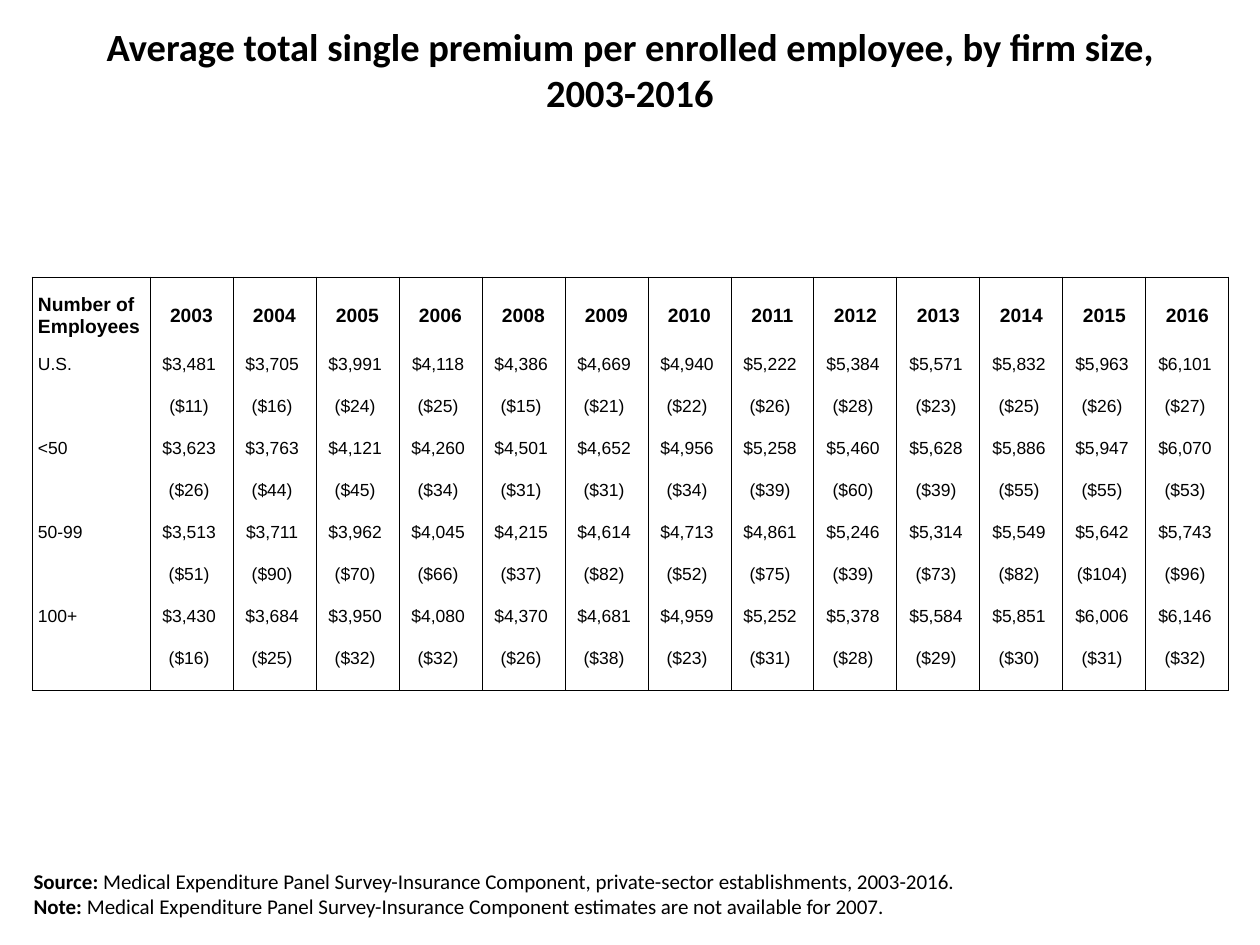
"""Build a slide with a table of single premiums by firm size."""
from lxml import etree
from pptx import Presentation
from pptx.dml.color import RGBColor
from pptx.enum.text import MSO_ANCHOR, PP_ALIGN
from pptx.oxml.ns import qn
from pptx.util import Pt

LEFT, CENTER = PP_ALIGN.LEFT, PP_ALIGN.CENTER
TOP, MIDDLE = MSO_ANCHOR.TOP, MSO_ANCHOR.MIDDLE
BLACK = RGBColor(0, 0, 0)
SCALE = 914400 / 126

TITLE = "Average total single premium per enrolled employee, by firm size, 2003-2016"
NOTES = [
    ("Source: ", "Medical Expenditure Panel Survey-Insurance Component, private-sector establishments, 2003-2016."),
    ("Note: ", "Medical Expenditure Panel Survey-Insurance Component estimates are not available for 2007."),
]
HEAD = "Number of Employees"
YEARS = [2003, 2004, 2005, 2006, 2008, 2009, 2010, 2011, 2012, 2013, 2014, 2015, 2016]
SIZES = [
    ("U.S.",
     [3481, 3705, 3991, 4118, 4386, 4669, 4940, 5222, 5384, 5571, 5832, 5963, 6101],
     [11, 16, 24, 25, 15, 21, 22, 26, 28, 23, 25, 26, 27]),
    ("<50",
     [3623, 3763, 4121, 4260, 4501, 4652, 4956, 5258, 5460, 5628, 5886, 5947, 6070],
     [26, 44, 45, 34, 31, 31, 34, 39, 60, 39, 55, 55, 53]),
    ("50-99",
     [3513, 3711, 3962, 4045, 4215, 4614, 4713, 4861, 5246, 5314, 5549, 5642, 5743],
     [51, 90, 70, 66, 37, 82, 52, 75, 39, 73, 82, 104, 96]),
    ("100+",
     [3430, 3684, 3950, 4080, 4370, 4681, 4959, 5252, 5378, 5584, 5851, 6006, 6146],
     [16, 25, 32, 32, 26, 38, 23, 31, 28, 29, 30, 31, 32]),
]

TITLE_BOX = (63, 1, 1134, 136)
TABLE_BOX = (32, 277, 1197, 414)
NOTE_BOX = (21, 862, 955, 73)
HEAD_COL, YEAR_COL = 118, 83
HEAD_ROW, DATA_ROW = 78, 42
INDENT = 6

TITLE_FONT = {"name": "Calibri", "size": Pt(22), "bold": True}
HEAD_FONT = {"name": "Arial", "size": Pt(11), "bold": True}
CELL_FONT = {"name": "Arial", "size": Pt(10), "bold": False}
TERM_FONT = {"name": "Calibri", "size": Pt(12), "bold": True}
NOTE_FONT = {**TERM_FONT, "bold": False}
FLUSH = {"margin_left": 0, "margin_right": 0, "margin_top": 0, "margin_bottom": 0}


def px(num):
    return round(num * SCALE)


def assign(obj, values):
    for key, value in values.items():
        setattr(obj, key, value)


def place(shape, box):
    assign(shape, dict(zip(("left", "top", "width", "height"), map(px, box))))


def write(para, text, font):
    run = para.add_run()
    run.text = text
    assign(run.font, font)
    run.font.color.rgb = BLACK


def rule(cell, side, drawn):
    line = etree.SubElement(cell._tc.get_or_add_tcPr(), qn("a:ln" + side), w=str(Pt(0.5)))
    if drawn:
        fill = etree.SubElement(line, qn("a:solidFill"))
        etree.SubElement(fill, qn("a:srgbClr"), val=str(BLACK))
    else:
        etree.SubElement(line, qn("a:noFill"))


def add_title(slide):
    title = slide.shapes.title
    place(title, TITLE_BOX)
    title.text_frame.vertical_anchor = MIDDLE
    para = title.text_frame.paragraphs[0]
    para.alignment = CENTER
    write(para, TITLE, TITLE_FONT)


def add_notes(slide):
    body = slide.placeholders[1]
    place(body, NOTE_BOX)
    frame = body.text_frame
    for num, (term, text) in enumerate(NOTES):
        para = frame.add_paragraph() if num else frame.paragraphs[0]
        props = para._p.get_or_add_pPr()
        assign(para, {"space_before": Pt(0), "space_after": Pt(0)})
        props.set("marL", "0")
        props.set("indent", "0")
        etree.SubElement(props, qn("a:buNone"))
        write(para, term, TERM_FONT)
        write(para, text, NOTE_FONT)


def table_rows():
    rows = [[HEAD] + [str(year) for year in YEARS]]
    for name, means, errors in SIZES:
        rows.append([name] + [f"${mean:,} " for mean in means])
        rows.append([""] + [f"(${error}) " for error in errors])
    return rows


def add_grid(slide):
    rows = table_rows()
    last = len(rows) - 1
    grid = slide.shapes.add_table(len(rows), len(rows[0]), *map(px, TABLE_BOX)).table
    assign(grid, {"first_row": False, "horz_banding": False})
    for num, col in enumerate(grid.columns):
        col.width = px(YEAR_COL if num else HEAD_COL)
    for num, row in enumerate(grid.rows):
        row.height = px(DATA_ROW if num else HEAD_ROW)
    for r, row in enumerate(rows):
        for c, text in enumerate(row):
            cell = grid.cell(r, c)
            assign(cell, {**FLUSH, "vertical_anchor": TOP if r else MIDDLE})
            for side, drawn in (("L", True), ("R", True), ("T", r == 0), ("B", r == last)):
                rule(cell, side, drawn)
            cell.fill.background()
            para = cell.text_frame.paragraphs[0]
            para.alignment = CENTER if c else LEFT
            if c == 0:
                para._p.get_or_add_pPr().set("marL", str(px(INDENT)))
            if text:
                write(para, text, CELL_FONT if r else HEAD_FONT)


def main():
    deck = Presentation()
    assign(deck, {"slide_width": px(1260), "slide_height": px(945)})
    slide = deck.slides.add_slide(deck.slide_layouts[1])
    add_title(slide)
    add_grid(slide)
    add_notes(slide)
    deck.save("out.pptx")


if __name__ == "__main__":
    main()
